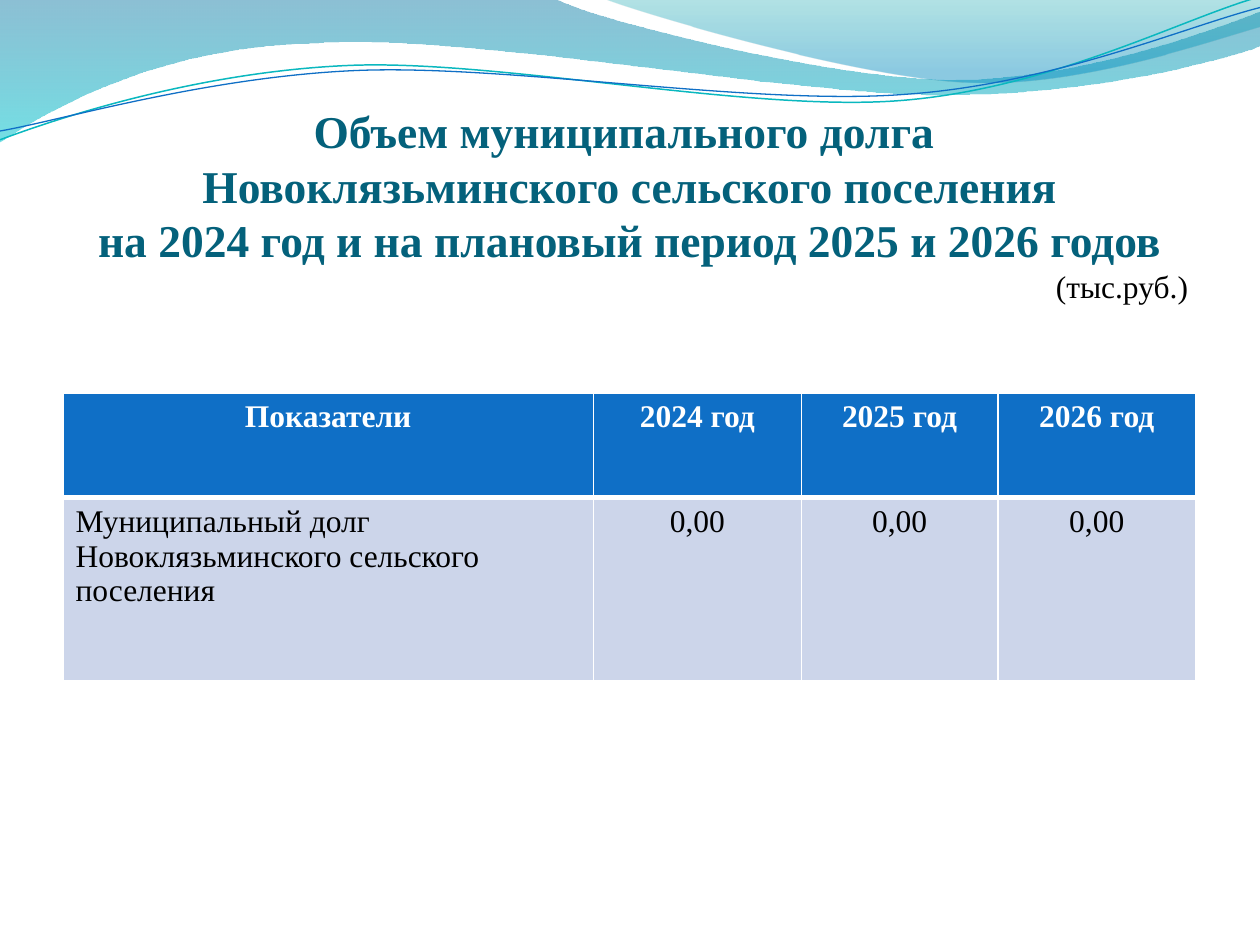
from lxml.etree import SubElement as Sub
from pptx import Presentation
from pptx.dml.color import RGBColor
from pptx.enum.text import MSO_ANCHOR as Anchor, MSO_AUTO_SIZE as Fit, PP_ALIGN as Align
from pptx.oxml.ns import qn
from pptx.util import Inches, Pt

FONT = "Times New Roman"
BLUE, WHITE, BLACK = "0F6FC6", "FFFFFF", "000000"

BANDS = [
    ([(0, 0), (4.4, -0.01),
      (4.76, 0.17, 6.64, 0.63, 7.58, 0.63), (8.53, 0.63, 9.58, 0.26, 10, 0.09),
      (10.01, 0.36),
      (9.83, 0.44, 8.7, 0.76, 7.46, 0.75), (6.22, 0.75, 3.82, 0.28, 2.57, 0.34),
      (1.29, 0.36, 0.46, 0.83, -0.01, 1.13), (0, 0)],
     [(0, "0074A1", 45), (1, "00C6CF", 55)]),
    ([(4.79, -0.01),
      (5.09, 0.11, 6.82, 0.62, 7.69, 0.65), (8.56, 0.69, 9.61, 0.32, 10, 0.21),
      (10, 0), (4.79, -0.01)],
     [(0, "00A1A9", 30), (0.8, "008BBF", 45)]),
]
WAVES = [
    ([(0, 1.11), (0.48, 0.93, 1.58, 0.57, 2.77, 0.52),
      (3.95, 0.47, 5.93, 0.89, 7.13, 0.8), (8.33, 0.71, 9.38, 0.15, 9.98, -0.02)],
     "0AB8BF", 0.85),
    ([(0, 1.04), (0.47, 0.96, 1.64, 0.61, 2.83, 0.56),
      (4.03, 0.51, 5.97, 0.84, 7.17, 0.75), (8.36, 0.67, 9.41, 0.21, 10, 0.06)],
     BLUE, 0.75),
]
ROWS = [
    ["Показатели", "2024 год", "2025 год", "2026 год"],
    ["Муниципальный долг Новоклязьминского сельского поселения", "0,00", "0,00", "0,00"],
]


def color(code):
    return RGBColor.from_string(code)


def add_run(para, text, size, code, bold=False):
    run = para.add_run()
    run.text = text
    font = run.font
    font.name, font.size, font.bold = FONT, Pt(size), bold
    font.color.rgb = color(code)


def add_curve(slide, left, top, parts, close):
    dots = [(left + Inches(x), top + Inches(y))
            for part in parts for x, y in zip(part[::2], part[1::2])]
    pen = slide.shapes.build_freeform(*dots[0])
    pen.add_line_segments(dots[1:], close=close)
    shape = pen.convert_to_shape()
    shape.shadow.inherit = False
    lines = iter(list(shape._element.iter(qn("a:lnTo"))))
    for part in parts[1:]:
        first = next(lines)
        if len(part) == 6:
            first.tag = qn("a:cubicBezTo")
            for line in (next(lines), next(lines)):
                first.append(line[0])
                line.getparent().remove(line)
    return shape


def add_waves(slide, left, top):
    for parts, stops in BANDS:
        band = add_curve(slide, left, top, parts, True)
        band.line.fill.background()
        band.fill.gradient()
        band.fill.gradient_angle = 270
        for stop, (place, code, _) in zip(band.fill.gradient_stops, stops):
            stop.position = place
            stop.color.rgb = color(code)
        for node, (_, _, alpha) in zip(band._element.iter(qn("a:srgbClr")), stops):
            Sub(node, qn("a:alpha"), val=str(alpha * 1000))
    for parts, code, width in WAVES:
        wave = add_curve(slide, left, top, parts, False)
        wave.fill.background()
        wave.line.color.rgb = color(code)
        wave.line.width = Pt(width)


def add_title(slide, left, top, width, height):
    title = slide.shapes.title
    title.left, title.top, title.width, title.height = left, top, width, height
    slide.shapes._spTree.append(title._element)
    frame = title.text_frame
    frame.word_wrap = True
    frame.auto_size = Fit.NONE
    frame.vertical_anchor = Anchor.TOP
    frame.margin_left = frame.margin_right = Inches(0.07)
    frame.margin_top, frame.margin_bottom = Inches(0.05), 0
    head = frame.paragraphs[0]
    head.alignment = Align.CENTER
    lines = ["Объем муниципального долга ",
             "Новоклязьминского сельского поселения",
             "на 2024 год и на плановый период 2025 и 2026 годов"]
    for row, line in enumerate(lines):
        if row:
            head.add_line_break()
        add_run(head, line, 26, "04617B", True)
    unit = frame.add_paragraph()
    unit.alignment = Align.RIGHT
    add_run(unit, "(тыс.руб.)", 18, BLACK)


def set_edges(cell, **widths):
    props = cell._tc.get_or_add_tcPr()
    for side in "LRTB":
        edge = Sub(props, qn("a:ln" + side), w=str(Pt(widths.get(side, 1))))
        Sub(Sub(edge, qn("a:solidFill")), qn("a:srgbClr"), val=WHITE)


def add_grid(slide, left, top, width, height):
    grid = slide.shapes.add_table(2, 4, left, top, width, height).table
    for col, size in zip(grid.columns, (4.21, 1.65, 1.56, 1.57)):
        col.width = Inches(size)
    grid.rows[0].height = Inches(0.83)
    grid.rows[1].height = height - Inches(0.83)
    for r, texts in enumerate(ROWS):
        head = r == 0
        for c, text in enumerate(texts):
            cell = grid.cell(r, c)
            set_edges(cell, **({"B": 3} if head else {"T": 3}))
            cell.fill.solid()
            cell.fill.fore_color.rgb = color(BLUE if head else "CCD5EA")
            para = cell.text_frame.paragraphs[0]
            para.alignment = Align.CENTER if head or c else Align.LEFT
            add_run(para, text, 18, WHITE if head else BLACK, head)


def main():
    deck = Presentation()
    deck.slide_width, deck.slide_height = Inches(10), Inches(7.5)
    slide = deck.slides.add_slide(deck.slide_layouts[5])
    add_waves(slide, 0, 0)
    add_title(slide, Inches(0.5), Inches(0.77), Inches(9), Inches(1.96))
    add_grid(slide, Inches(0.5), Inches(3.12), Inches(8.99), Inches(2.28))
    deck.save("out.pptx")


if __name__ == "__main__":
    main()
